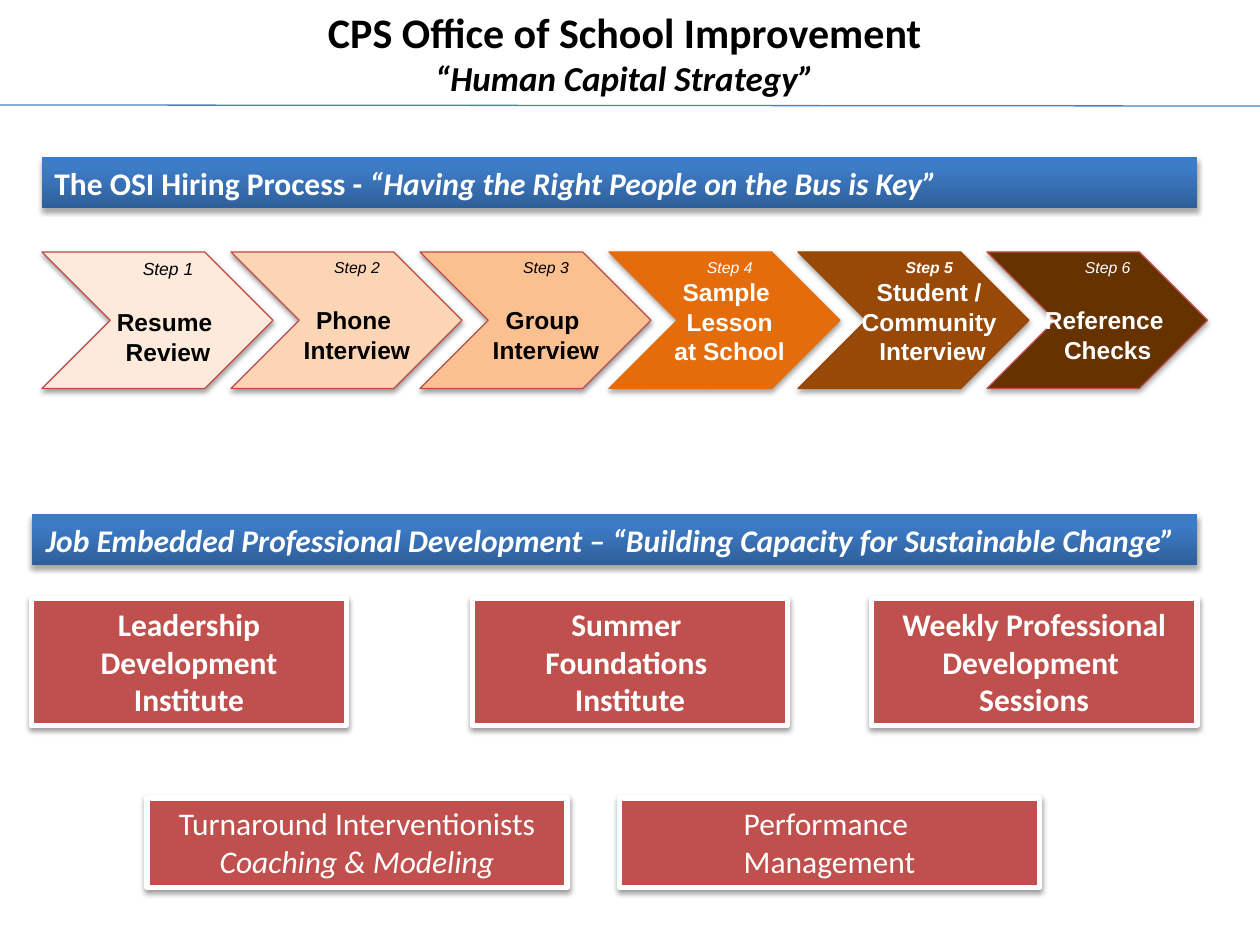
"""Build the school improvement hiring and development slide."""
from copy import deepcopy

from lxml import etree
from pptx import Presentation
from pptx.dml.color import RGBColor
from pptx.enum.shapes import MSO_CONNECTOR, MSO_SHAPE
from pptx.enum.text import MSO_ANCHOR, MSO_AUTO_SIZE, PP_ALIGN
from pptx.oxml.ns import qn
from pptx.util import Emu, Pt

PX = 7620
RECT, CHEVRON = MSO_SHAPE.RECTANGLE, MSO_SHAPE.CHEVRON
STRAIGHT = MSO_CONNECTOR.STRAIGHT
LEFT, CENTER = PP_ALIGN.LEFT, PP_ALIGN.CENTER
TOP, FIXED = MSO_ANCHOR.TOP, MSO_AUTO_SIZE.NONE
WHITE, BLACK, RED, BLUE = "FFFFFF", "000000", "C0504D", "4F81BD"
EDGE, ORANGE, BROWN = "BF4C48", "E46C0A", "984807"
BANNER_STOPS = [(0, "2F5F99"), (0.8, "3D7CC7"), (1, "3A7CCB")]
STEP_PITCH = 180

STEPS = [
    (["Resume ", "Review"], "FDEADA", EDGE, BLACK, 220, 20, 200),
    (["Phone ", "Interview"], "FCD5B5", EDGE, BLACK, 220, 20, 200),
    (["Group ", "Interview"], "FAC090", EDGE, BLACK, 220, 20, 200),
    (["Sample ", "Lesson", "at School"], ORANGE, ORANGE, WHITE, 220, 10, 210),
    (["Student /", "Community", " Interview"], BROWN, BROWN, WHITE, 220, 20, 210),
    (["Reference ", "Checks"], "663300", EDGE, WHITE, 210, 20, 190),
]
PROGRAMS = [
    ((30, 570, 300, 121), ["Leadership Development Institute"]),
    ((450, 570, 300, 121), ["Summer ", "Foundations ", "Institute"]),
    ((830, 570, 310, 121), ["Weekly Professional Development ", "Sessions"]),
]
SUPPORTS = [
    ((140, 760, 400, 85), [("Turnaround Interventionists", {}),
                           ("Coaching & Modeling", {"italic": True})]),
    ((590, 760, 400, 85), [("Performance ", {}), ("Management", {})]),
]


def px(*lengths):
    """Turn pixel lengths into EMU."""
    return [Emu(length * PX) for length in lengths]


def rgb(code):
    """Turn a hex string into a colour."""
    return RGBColor.from_string(code)


def write(shape, lines, align=CENTER, gap=0, **base):
    """Fill a shape with lines, each a list of (text, format) runs."""
    frame = shape.text_frame
    frame.word_wrap = True
    frame.auto_size = FIXED
    frame.vertical_anchor = TOP
    for number, runs in enumerate(lines):
        paragraph = frame.add_paragraph() if number else frame.paragraphs[0]
        paragraph.alignment = align
        paragraph.space_before = Pt(gap if number == 1 else 0)
        for text, changes in runs:
            look = {"font": "Calibri", "size": 18, "color": WHITE,
                    "bold": False, "italic": False, **base, **changes}
            run = paragraph.add_run()
            run.text = text
            run.font.name = look["font"]
            run.font.size = Pt(look["size"])
            run.font.bold = look["bold"]
            run.font.italic = look["italic"]
            run.font.color.rgb = rgb(look["color"])


def cast_shadow(shape, distance, opacity):
    """Give a shape a soft shadow straight below it."""
    shape.shadow.inherit = False
    effects = shape.element.spPr.find(qn("a:effectLst"))
    shadow = etree.SubElement(effects, qn("a:outerShdw"), blurRad="40000",
                              dist=str(distance), dir="5400000", rotWithShape="0")
    color = etree.SubElement(shadow, qn("a:srgbClr"), val=BLACK)
    etree.SubElement(color, qn("a:alpha"), val=str(opacity * 1000))


def add_block(slide, kind, box, fill, line, weight, distance=20000, opacity=38):
    """Add a filled, outlined shape with a shadow."""
    block = slide.shapes.add_shape(kind, *px(*box))
    block.fill.solid()
    block.fill.fore_color.rgb = rgb(fill)
    block.line.color.rgb = rgb(line)
    block.line.width = Pt(weight)
    cast_shadow(block, distance, opacity)
    return block


def add_header(slide, box):
    """Place the two-line title and the rule beneath it."""
    left, top, width, height = box
    rule = slide.shapes.add_connector(
        STRAIGHT, *px(0, top + height, 1200, top + height + 1))
    rule.line.color.rgb = rgb(BLUE)
    rule.line.width = Pt(0.75)
    etree.SubElement(rule.element.spPr, qn("a:effectLst"))
    title = slide.shapes.title
    title.left, title.top, title.width, title.height = px(*box)
    write(title, [[("CPS Office of School Improvement", {"size": 24})],
                  [("“Human Capital Strategy”", {"size": 20, "italic": True})]],
          color=BLACK, bold=True)


def add_banner(slide, box, runs, align):
    """Place a section heading on a blue gradient bar."""
    banner = slide.shapes.add_shape(RECT, *px(*box))
    banner.fill.gradient()
    banner.fill.gradient_angle = 90
    stop_list = banner.element.spPr.find(".//" + qn("a:gsLst"))
    stop_list.append(deepcopy(stop_list[-1]))
    for stop, (position, color) in zip(banner.fill.gradient_stops, BANNER_STOPS):
        stop.position = position
        stop.color.rgb = rgb(color)
    banner.line.fill.background()
    cast_shadow(banner, 23000, 35)
    write(banner, [runs], align, bold=True)


def add_hiring_steps(slide, left, top):
    """Place the row of hiring chevrons with their labels."""
    for number, step in enumerate(STEPS, 1):
        names, fill, line, color, width, inset, label_width = step
        step_left = left + (number - 1) * STEP_PITCH
        depth = (23000, 35) if color == WHITE else (20000, 38)
        add_block(slide, CHEVRON, (step_left, top, width, 130),
                  fill, line, 0.75, *depth)
        label = slide.shapes.add_textbox(
            *px(step_left + inset, top, label_width, 136))
        heading = {"size": 10 if number == 1 else 9, "italic": True,
                   "bold": number == 5}
        lines = [[(f"Step {number}", heading)]] + [[(name, {})] for name in names]
        write(label, lines, gap=16 if len(names) == 2 else 0,
              font="Arial", size=14, bold=True, color=color)


def add_development(slide):
    """Place the red cards for programs and supports."""
    cards = [(box, [(name, {"bold": True}) for name in names])
             for box, names in PROGRAMS]
    for box, lines in cards + SUPPORTS:
        card = add_block(slide, RECT, box, RED, WHITE, 3)
        write(card, [[line] for line in lines])


def main():
    """Assemble and save the slide."""
    deck = Presentation()
    deck.slide_width, deck.slide_height = px(1200, 900)
    slide = deck.slides.add_slide(deck.slide_layouts[5])
    add_header(slide, (20, 0, 1150, 100))
    add_banner(slide, (40, 150, 1100, 48),
               [("The OSI Hiring Process - ", {}),
                ("“Having the Right People on the Bus is Key”", {"italic": True})],
               LEFT)
    add_hiring_steps(slide, 40, 240)
    add_banner(slide, (30, 490, 1110, 48),
               [("Job Embedded Professional Development – "
                 "“Building Capacity for Sustainable Change” ", {"italic": True})],
               CENTER)
    add_development(slide)
    deck.save("out.pptx")


if __name__ == "__main__":
    main()
